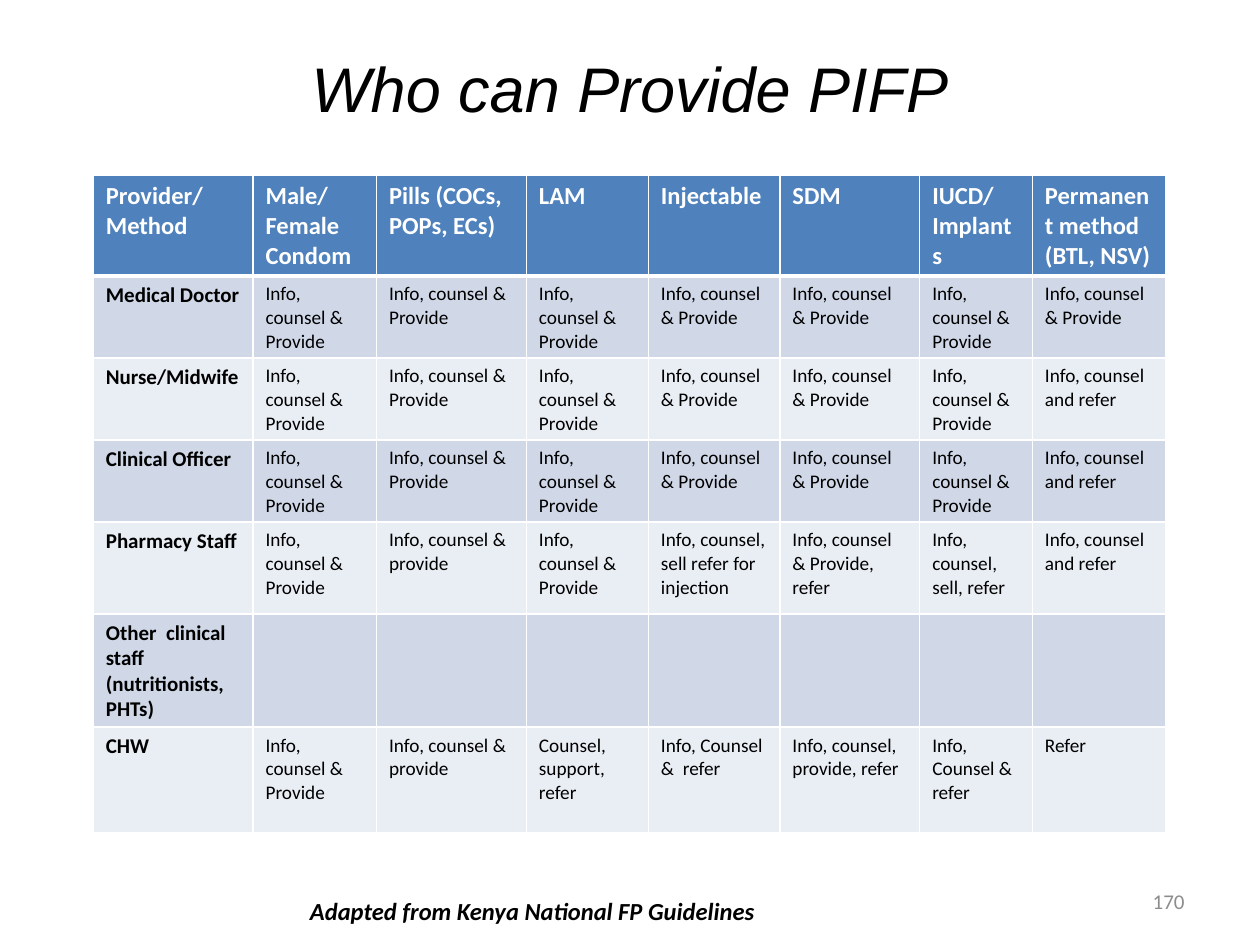
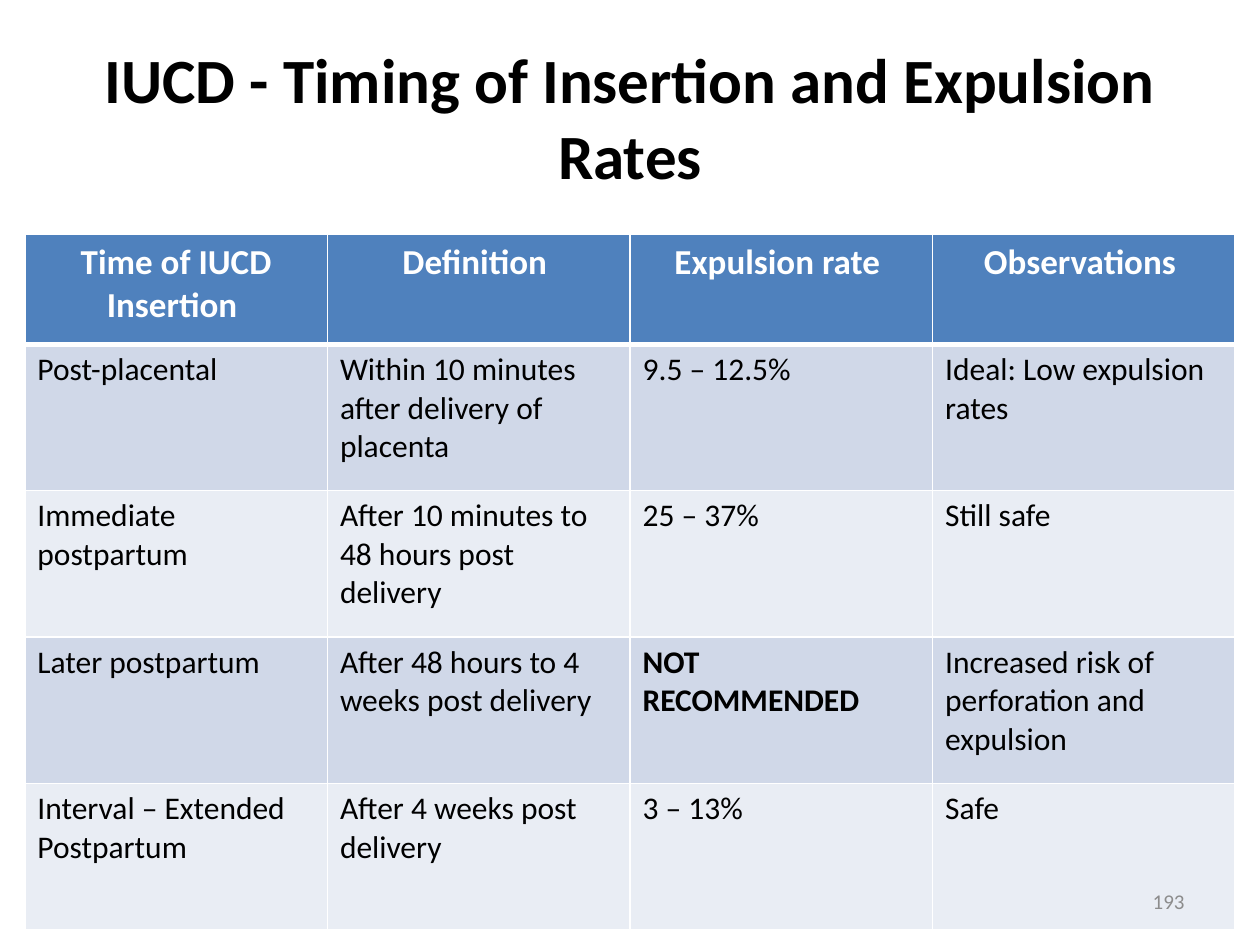
from lxml.etree import SubElement
from pptx import Presentation
from pptx.dml.color import RGBColor as RGB
from pptx.enum.text import MSO_ANCHOR as Anchor, PP_ALIGN as Align
from pptx.oxml.ns import qn
from pptx.util import Cm, Pt

COLORS = {"text": "000000", "header": "4F81BD", "dark": "D0D8E8",
          "light": "E9EDF4", "white": "FFFFFF", "number": "8C8C8C"}
FONT = "Calibri"

FULL = "Info, counsel & Provide"
PILLS = "Info, counsel & provide"
REFER = "Info, counsel and refer"

PROVIDERS = [
    ["Provider/ Method", "Male/Female Condom", "Pills (COCs, POPs, ECs)", "LAM",
     "Injectable", "SDM", "IUCD/Implants", "Permanent method (BTL, NSV)"],
    ["Medical Doctor"] + [FULL] * 7,
    ["Nurse/Midwife"] + [FULL] * 6 + [REFER],
    ["Clinical Officer"] + [FULL] * 6 + [REFER],
    ["Pharmacy Staff", FULL, PILLS, FULL, "Info, counsel, sell refer for injection",
     "Info, counsel & Provide, refer", "Info, counsel, sell, refer", REFER],
    ["Other  clinical staff (nutritionists, PHTs)"] + [""] * 7,
    ["CHW", FULL, PILLS, "Counsel, support, refer", "Info, Counsel &  refer",
     "Info, counsel, provide, refer", "Info, Counsel &  refer", "Refer"],
]

TIMINGS = [
    ["Time of IUCD Insertion ", "Definition ", "Expulsion rate ", "Observations "],
    ["Post-placental", "Within 10 minutes after delivery of placenta",
     "9.5 – 12.5%", "Ideal: Low expulsion rates"],
    ["Immediate postpartum", "After 10 minutes to 48 hours post delivery",
     "25 – 37%", "Still safe"],
    ["Later postpartum", "After 48 hours to 4 weeks post delivery",
     "NOT RECOMMENDED", "Increased risk of perforation and expulsion"],
    ["Interval – Extended Postpartum", "After 4 weeks post delivery",
     "3 – 13%", "Safe"],
]


class Deck:
    """Shared style and the slide being built."""

    def __init__(self):
        self.prs = Presentation()
        self.prs.slide_width, self.prs.slide_height = Cm(25.4), Cm(19.05)
        self.s = None

    def slide(self, number):
        self.s = self.prs.slides.add_slide(self.prs.slide_layouts[6])
        self.number = number

    def run(self, p, text, size, color="text", bold=False, italic=False, font=FONT):
        r = p.add_run()
        r.text = text
        r.font.size, r.font.name = Pt(size), font
        r.font.bold, r.font.italic = bold, italic
        r.font.color.rgb = RGB.from_string(COLORS[color])

    def text(self, box, text, size, align=Align.LEFT, anchor=Anchor.TOP, **style):
        tf = self.s.shapes.add_textbox(*map(Cm, box)).text_frame
        tf.word_wrap, tf.vertical_anchor = True, anchor
        p = tf.paragraphs[0]
        p.alignment = align
        self.run(p, text, size, **style)

    def title(self, box, text, **style):
        self.text(box, text, 36, Align.CENTER, Anchor.MIDDLE, **style)

    def footer(self):
        self.text((18.2, 17.65, 5.93, 1.02), str(self.number), 12,
                  Align.RIGHT, Anchor.MIDDLE, color="number")

    def borders(self, cell, header):
        tc_pr = cell._tc.get_or_add_tcPr()
        for side in "LRTB":
            width = Pt(3 if header and side == "B" else 1)
            ln = SubElement(tc_pr, qn(f"a:ln{side}"), w=str(width))
            fill = SubElement(ln, qn("a:solidFill"))
            SubElement(fill, qn("a:srgbClr"), val=COLORS["white"])

    def table(self, left, top, widths, heights, rows, sizes,
              header_align=Align.LEFT, is_bold=lambda col, text: False):
        frame = self.s.shapes.add_table(
            len(rows), len(widths), Cm(left), Cm(top), Cm(sum(widths)), Cm(sum(heights)))
        table = frame.table
        for column, width in zip(table.columns, widths):
            column.width = Cm(width)
        for i, (row, height) in enumerate(zip(rows, heights)):
            table.rows[i].height = Cm(height)
            header = i == 0
            band = "header" if header else "dark" if i % 2 else "light"
            for j, text in enumerate(row):
                cell = table.cell(i, j)
                self.borders(cell, header)
                cell.fill.solid()
                cell.fill.fore_color.rgb = RGB.from_string(COLORS[band])
                if not text:
                    continue
                p = cell.text_frame.paragraphs[0]
                p.alignment = header_align if header else Align.LEFT
                label_size, body_size = sizes[1:]
                size = sizes[0] if header else body_size if j else label_size
                self.run(p, text, size, "white" if header else "text",
                         bold=header or is_bold(j, text))


def main():
    deck = Deck()

    deck.slide(170)
    deck.title((1.88, 0.74, 21.64, 2.06), "Who can Provide PIFP", italic=True, font="Arial")
    deck.table(1.88, 3.53, [3.22, 2.49, 3.02, 2.46, 2.65, 2.82, 2.27, 2.69],
               [2.01, 1.65, 1.65, 1.65, 1.85, 2.26, 2.13], PROVIDERS, (14, 12, 11),
               is_bold=lambda col, text: col == 0)
    deck.text((6, 17.93, 12.2, 0.86), "Adapted from Kenya National FP Guidelines", 14,
              bold=True, italic=True)
    deck.footer()

    deck.slide(193)
    deck.title((1.27, 0.76, 22.86, 3.18), "IUCD - Timing of Insertion and Expulsion Rates",
               bold=True)
    deck.table(0.5, 4.73, [6.1] * 4, [2.21] + [2.95] * 4, TIMINGS, (20, 18, 18),
               Align.CENTER, is_bold=lambda col, text: text.isupper())
    deck.footer()

    deck.prs.save("out.pptx")


if __name__ == "__main__":
    main()
